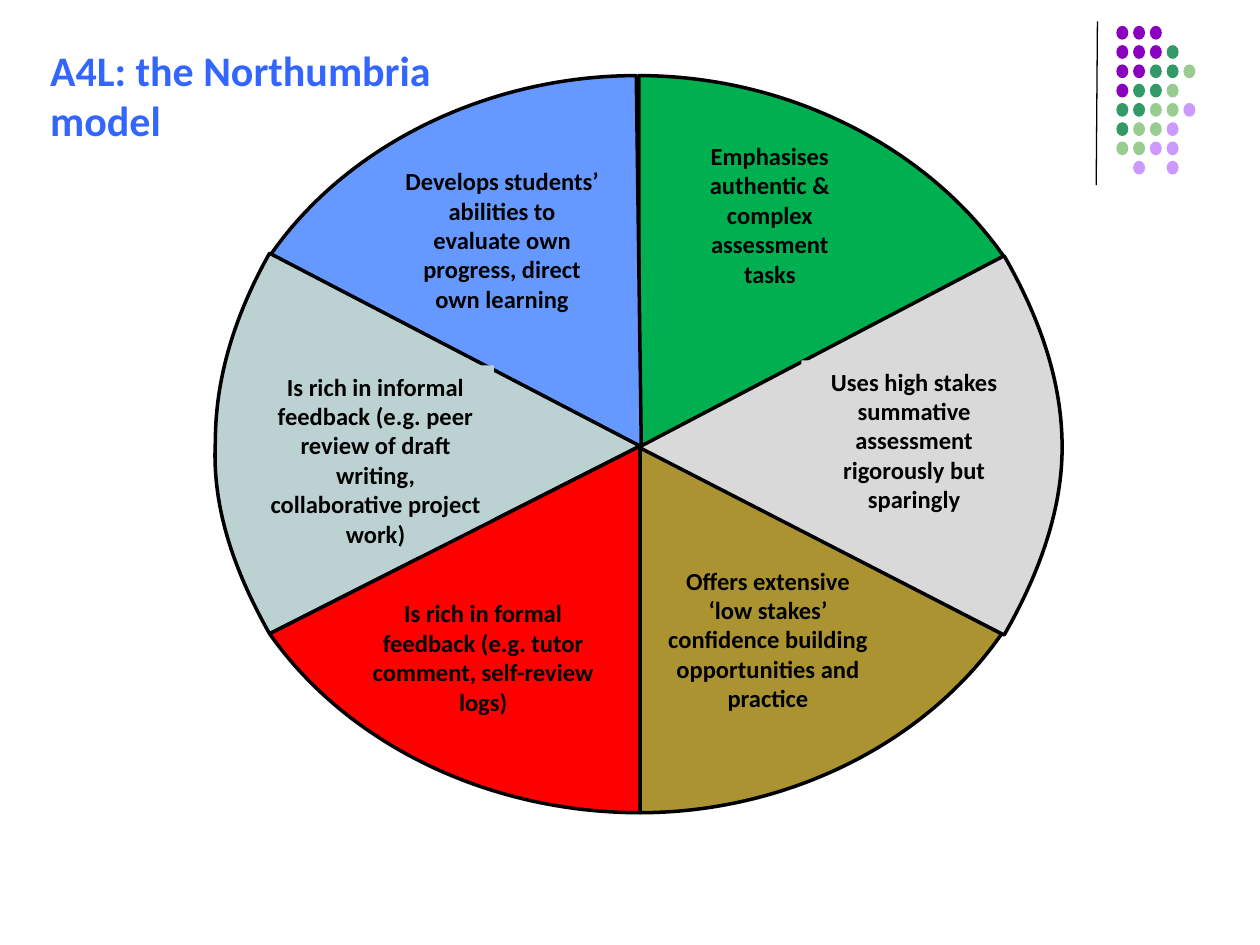
from dataclasses import dataclass

from lxml.etree import SubElement
from pptx import Presentation
from pptx.dml.color import RGBColor
from pptx.enum.shapes import MSO_CONNECTOR, MSO_SHAPE
from pptx.enum.text import PP_ALIGN
from pptx.oxml.ns import qn
from pptx.util import Inches, Pt

Point = tuple[float, float]
Box = tuple[float, float, float, float]

# The slide is a grid of 100 columns by 75 rows of square cells.
COLUMNS, ROWS = 100, 75
CELL = Inches(10) // COLUMNS
FONT = "Calibri"

COLORS = {
    "black": "000000", "title": "3366FF",
    "green": "00B050", "blue": "6699FF", "teal": "BCD2D2",
    "red": "FF0000", "olive": "AA9330", "grey": "D9D9D9",
    "P": "8A00C0", "G": "339966", "L": "99CC91", "V": "CC99FF",
}

# One letter per dot: purple, green, light green, violet.
DOT_ROWS = ["PPP", "PPPG", "PPGGL", "PGGL", "GGLLV", "GLLV", "LLVV", " V V"]
DOT_LEFT, DOT_TOP = 88.6, 2.05
DOT_STEP_X, DOT_STEP_Y = 1.33, 1.53
DOT_WIDTH, DOT_HEIGHT = 0.95, 1.1


@dataclass(frozen=True)
class Slice:
    """A wheel sector: rim holds a start, then three points per Bezier curve."""
    color: str
    rim: list[Point]
    hub: Point
    label: str
    label_box: Box
    filled_label: bool = False


SLICES = [
    Slice("green", [(79.7, 20.4), (73.5, 11.5), (62.3, 6), (50.7, 6)], (50.7, 35.8),
          "Emphasises authentic & complex assessment tasks",
          (54.4, 10.7, 13.4, 12.8), True),
    Slice("blue", [(50.5, 6), (38.9, 6), (27.6, 11.4), (21.5, 20.2)], (50.9, 35.5),
          "Develops students’ abilities to evaluate own progress, direct own learning",
          (31, 12.7, 17.7, 12.8)),
    Slice("teal", [(21.4, 20.1), (18.7, 24.9), (17.1, 29.9), (17.1, 35),
                   (16.8, 40.4), (18.7, 45.5), (21.4, 50.3)], (50.8, 35.4),
          "Is rich in informal feedback (e.g. peer review of draft writing, "
          "collaborative project work)",
          (20.4, 29, 18.8, 15.1), True),
    Slice("red", [(21.4, 50.3), (27.6, 59.1), (38.8, 64.5), (50.8, 64.5)], (50.8, 35.4),
          "Is rich in formal feedback (e.g. tutor comment, self-review logs)",
          (28, 47, 20.7, 10.4)),
    Slice("olive", [(50.8, 64.5), (62.3, 64.5), (73.4, 59.1), (79.5, 50.3)], (50.8, 35.4),
          "Offers extensive ‘low stakes’ confidence building opportunities and practice",
          (51.9, 44.4, 18.1, 12.8)),
    Slice("grey", [(79.7, 50.4), (82.4, 45.7), (84.3, 40.6), (84.3, 35.5),
                   (84.3, 30.1), (82.4, 25), (79.7, 20.3)], (50.7, 35.5),
          "Uses high stakes summative assessment rigorously but sparingly",
          (63.6, 28.6, 17.9, 12.8), True),
]


def rgb(name: str) -> RGBColor:
    return RGBColor.from_string(COLORS[name])


def emu(cells: float) -> int:
    return round(cells * CELL)


def bend_rim(sector, curve_count: int) -> None:
    """Turn the first straight segments, three at a time, into Bezier curves."""
    outline = next(sector._element.iter(qn("a:path")))
    segments = outline.findall(qn("a:lnTo"))
    for index in range(curve_count):
        first, *others = segments[3 * index:3 * index + 3]
        first.tag = qn("a:cubicBezTo")
        for segment in others:
            first.append(segment[0])
            outline.remove(segment)


def draw_text(slide, text: str, box: Box, size: int, color: str,
              align: PP_ALIGN, fill: str | None = None) -> None:
    text_box = slide.shapes.add_textbox(*map(emu, box))
    if fill:
        text_box.fill.solid()
        text_box.fill.fore_color.rgb = rgb(fill)
    frame = text_box.text_frame
    frame.word_wrap = True
    frame.text = text
    paragraph = frame.paragraphs[0]
    paragraph.alignment = align
    font = paragraph.runs[0].font
    font.name, font.size, font.bold = FONT, Pt(size), True
    font.color.rgb = rgb(color)


def draw_slice(slide, part: Slice) -> None:
    start, *others = [(emu(x), emu(y)) for x, y in [*part.rim, part.hub]]
    builder = slide.shapes.build_freeform(*start)
    builder.add_line_segments(others, close=True)
    sector = builder.convert_to_shape()
    bend_rim(sector, len(part.rim) // 3)
    sector.shadow.inherit = False
    sector.fill.solid()
    sector.fill.fore_color.rgb = rgb(part.color)
    sector.line.color.rgb = rgb("black")
    sector.line.width = Pt(2)
    draw_text(slide, part.label, part.label_box, 14, "black", PP_ALIGN.CENTER,
              part.color if part.filled_label else None)


def draw_corner_ornament(slide) -> None:
    rule = slide.shapes.add_connector(
        MSO_CONNECTOR.STRAIGHT, *map(emu, (87.1, 1.7, 87, 14.7)))
    rule.line.color.rgb = rgb("black")
    rule.line.width = Pt(0.75)
    SubElement(rule._element.spPr, qn("a:effectLst"))
    for row, letters in enumerate(DOT_ROWS):
        for column, letter in enumerate(letters):
            if letter == " ":
                continue
            dot = slide.shapes.add_shape(
                MSO_SHAPE.OVAL,
                emu(DOT_LEFT + column * DOT_STEP_X), emu(DOT_TOP + row * DOT_STEP_Y),
                emu(DOT_WIDTH), emu(DOT_HEIGHT))
            dot.shadow.inherit = False
            dot.fill.solid()
            dot.fill.fore_color.rgb = rgb(letter)
            dot.line.fill.background()


def main() -> None:
    deck = Presentation()
    deck.slide_width, deck.slide_height = emu(COLUMNS), emu(ROWS)
    slide = deck.slides.add_slide(deck.slide_layouts[6])
    draw_corner_ornament(slide)
    for part in SLICES:
        draw_slice(slide, part)
    draw_text(slide, "A4L: the Northumbria model", (3, 3, 36.4, 9.1), 24,
              "title", PP_ALIGN.LEFT)
    deck.save("out.pptx")


if __name__ == "__main__":
    main()
